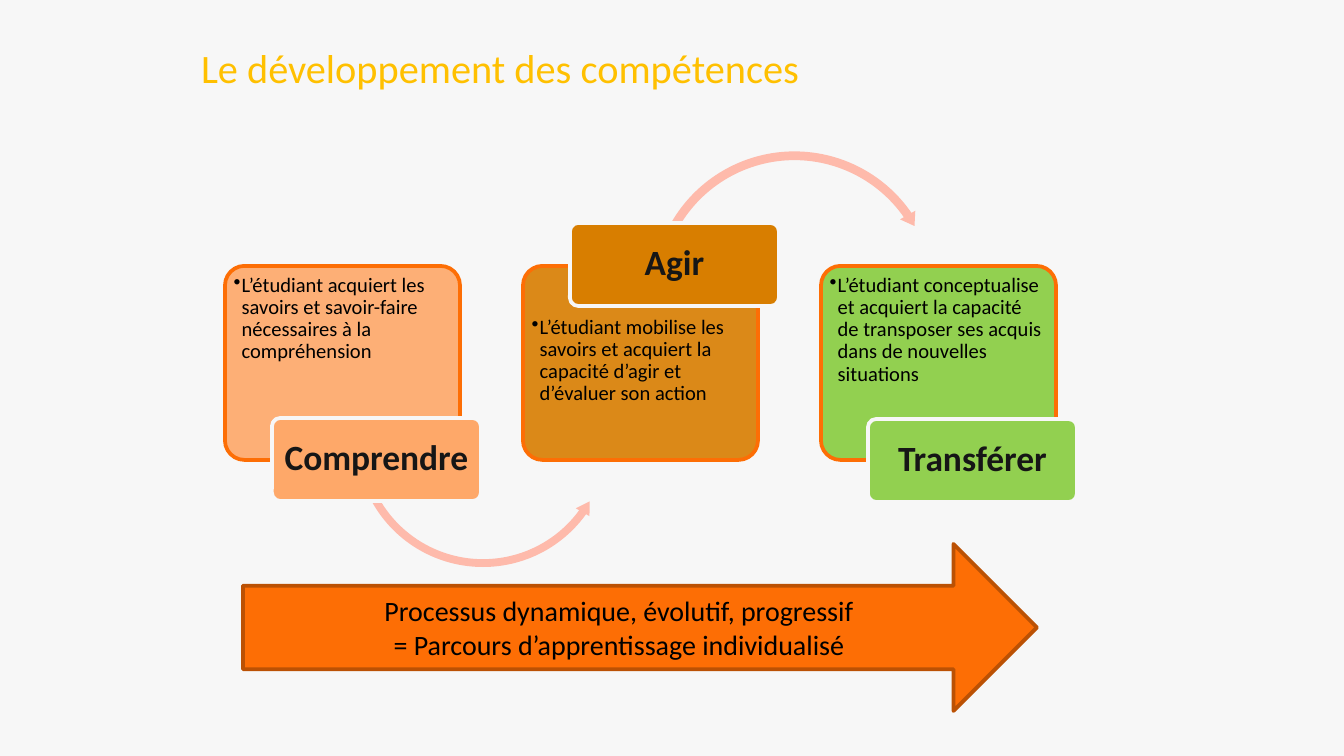
import lxml.etree
import pptx
import pptx.dml.color
import pptx.enum.shapes
import pptx.enum.text
import pptx.oxml.ns
import pptx.util

RGBColor = pptx.dml.color.RGBColor
SHAPE = pptx.enum.shapes.MSO_SHAPE
ALIGN = pptx.enum.text.PP_ALIGN
ANCHOR = pptx.enum.text.MSO_ANCHOR
qn = pptx.oxml.ns.qn

PX = 914400 / 134.4
BACKGROUND = RGBColor(0xF7, 0xF7, 0xF7)
GOLD = RGBColor(0xFF, 0xC0, 0x00)
PEACH = RGBColor(0xFE, 0xA8, 0x69)
OCHRE = RGBColor(0xD8, 0x7E, 0x00)
GREEN = RGBColor(0x92, 0xD0, 0x50)
ORANGE = RGBColor(0xFD, 0x6E, 0x05)
RUST = RGBColor(0xBB, 0x51, 0x04)
PINK = RGBColor(0xFE, 0xBA, 0xAB)
BLACK = RGBColor(0x00, 0x00, 0x00)
DARK = RGBColor(0x16, 0x16, 0x16)


def add_shape(kind, box, fill, line=None, adjustments=()):
    shape = slide.shapes.add_shape(kind, *[round(length * PX) for length in box])
    shape.shadow.inherit = False
    shape.fill.solid()
    shape.fill.fore_color.rgb = fill
    if line is None:
        shape.line.fill.background()
    else:
        shape.line.color.rgb = line
        shape.line.width = pptx.util.Pt(2)
    for index, value in enumerate(adjustments):
        shape.adjustments[index] = value
    return shape


def write_text(shape, lines, size, color, align, anchor, insets, bold=False, spacing=None):
    frame = shape.text_frame
    frame.word_wrap = True
    frame.vertical_anchor = anchor
    left, top, right, bottom = [round(inset * PX) for inset in insets]
    frame.margin_left, frame.margin_top = left, top
    frame.margin_right, frame.margin_bottom = right, bottom
    frame.text = "\n".join(lines)
    for paragraph in frame.paragraphs:
        paragraph.alignment = align
        paragraph.line_spacing = spacing
        paragraph.font.name = "Calibri"
        paragraph.font.size = pptx.util.Pt(size)
        paragraph.font.bold = bold
        paragraph.font.color.rgb = color


presentation = pptx.Presentation()
presentation.slide_width = round(1344 * PX)
presentation.slide_height = round(756 * PX)
slide = presentation.slides.add_slide(presentation.slide_layouts[5])
slide.background.fill.solid()
slide.background.fill.fore_color.rgb = BACKGROUND

title = slide.shapes.title
title.left, title.top = round(188 * PX), round(28 * PX)
title.width, title.height = round(969 * PX), round(79 * PX)
write_text(title, ["Le développement des compétences"], 21.6, GOLD,
           ALIGN.LEFT, ANCHOR.MIDDLE, (13, 13, 13, 13))

steps = [
    ("Comprendre",
     "L’étudiant acquiert les savoirs et savoir-faire nécessaires à la compréhension",
     PEACH, 90, 418, 3,
     (SHAPE.LEFT_CIRCULAR_ARROW, (352, 309, 262, 262), (0.03, 3.62, 21.56, 90.43, 0.03))),
    ("Agir",
     "L’étudiant mobilise les savoirs et acquiert la capacité d’agir et d’évaluer son action",
     OCHRE, 90, 223, 45,
     (SHAPE.CIRCULAR_ARROW, (648, 147, 293, 293), (0.03, 3.22, 195.18, 125.92, 0.03))),
    ("Transférer",
     "L’étudiant conceptualise et acquiert la capacité de transposer ses acquis dans de nouvelles situations",
     GREEN, 100, 419, 3, None),
]
for index, (name, description, color, opacity, label_top, text_top, arrow) in enumerate(steps):
    card_left = 225 + index * 298
    card = add_shape(SHAPE.ROUNDED_RECTANGLE, (card_left, 266, 235, 194), color, ORANGE, [0.1])
    if opacity < 100:
        fill_color = card.fill._xPr.find(qn("a:solidFill"))[0]
        lxml.etree.SubElement(fill_color, qn("a:alpha"), val=str(opacity * 1000))
    write_text(card, [description], 11, BLACK, ALIGN.LEFT, ANCHOR.TOP,
               (3, text_top, 3, 3), spacing=0.9)
    properties = card.text_frame.paragraphs[0]._p.get_or_add_pPr()
    properties.set("marL", str(round(8 * PX)))
    properties.set("indent", str(round(-8 * PX)))
    bullet = lxml.etree.Element(qn("a:buChar"), char="•")
    properties.find(qn("a:defRPr")).addprevious(bullet)

    if arrow:
        kind, box, adjustments = arrow
        add_shape(kind, box, PINK, adjustments=adjustments)

    label = add_shape(SHAPE.ROUNDED_RECTANGLE, (card_left + 47, label_top, 209, 83),
                      color, BACKGROUND, [0.1])
    write_text(label, [name], 19, DARK, ALIGN.CENTER, ANCHOR.MIDDLE,
               (5, 4, 5, 4), bold=True, spacing=0.9)

process = add_shape(SHAPE.RIGHT_ARROW, (243, 544, 794, 167), ORANGE, RUST)
write_text(process,
           ["Processus dynamique, évolutif, progressif", "= Parcours d’apprentissage individualisé"],
           15, BLACK, ALIGN.CENTER, ANCHOR.MIDDLE, (13, 7, 13, 7))

presentation.save("out.pptx")
